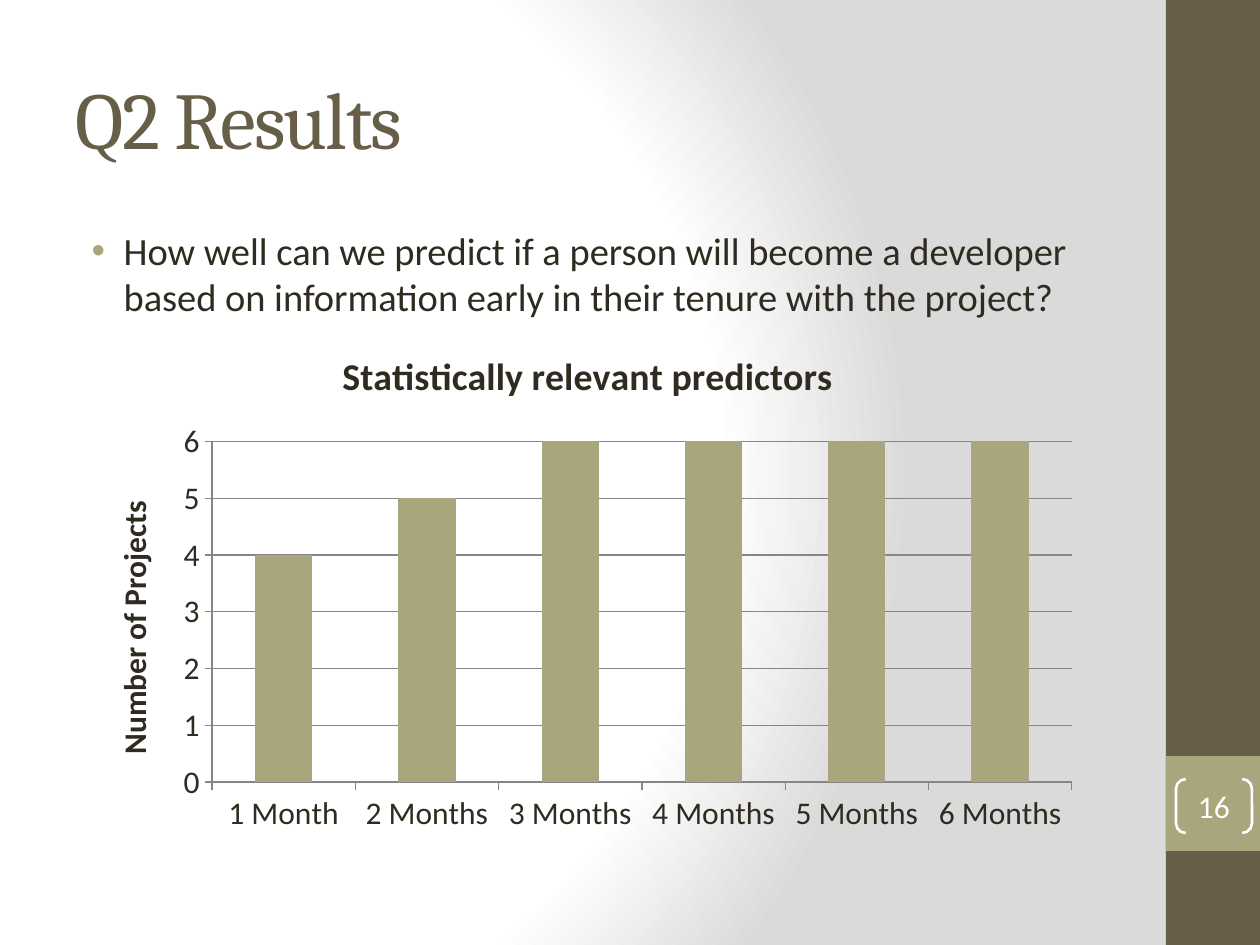
from lxml.etree import SubElement
from pptx import Presentation
from pptx.chart.data import CategoryChartData as ChartData
from pptx.dml.color import RGBColor
from pptx.enum.chart import XL_CHART_TYPE as Kind, XL_TICK_MARK as Tick
from pptx.enum.shapes import MSO_SHAPE as Shape
from pptx.enum.text import MSO_ANCHOR as Anchor, MSO_AUTO_SIZE as Fit, PP_ALIGN as Align
from pptx.oxml import parse_xml
from pptx.oxml.ns import nsdecls, qn
from pptx.util import Pt

PX = 914400 / 126
BROWN = RGBColor(0x67, 0x5E, 0x47)
OLIVE = RGBColor(0xA9, 0xA5, 0x7C)
DARK = RGBColor(0x2F, 0x2B, 0x20)
GRAY = RGBColor(0x86, 0x86, 0x86)
WHITE = RGBColor(0xFF, 0xFF, 0xFF)
SILVER = RGBColor(0xDA, 0xDA, 0xDA)


def scale(*sizes):
    return [round(size * PX) for size in sizes]


def style(font, size, color, name="Calibri", bold=False):
    font.size = Pt(size)
    font.color.rgb = color
    font.name = name
    font.bold = bold


deck = Presentation()
deck.slide_width, deck.slide_height = scale(1260, 945)
slide = deck.slides.add_slide(deck.slide_layouts[1])
shapes = slide.shapes

stops = "".join(
    f'<a:gs pos="{pos * 1000}"><a:srgbClr val="{color}"/></a:gs>'
    for pos, color in [(0, WHITE), (75, WHITE), (100, SILVER)])
slide.background.fill.solid()
props = slide.background._cSld.bg.bgPr
props.replace(props[0], parse_xml(
    f'<a:gradFill {nsdecls("a")} rotWithShape="1"><a:gsLst>{stops}</a:gsLst>'
    '<a:path path="circle"><a:fillToRect l="20000" t="50000" r="100000" b="50000"/>'
    '</a:path></a:gradFill>'))

for top, height, color in [(0, 945, BROWN), (756, 95, OLIVE)]:
    bar = shapes.add_shape(Shape.RECTANGLE, *scale(1166, top, 94, height))
    bar.shadow.inherit = False
    bar.fill.solid()
    bar.fill.fore_color.rgb = color
    bar.line.fill.background()

title = shapes.title
title.left, title.top, title.width, title.height = scale(63, 38, 1050, 158)
frame = title.text_frame
frame.text = "Q2 Results"
frame.auto_size = Fit.NONE
frame.vertical_anchor = Anchor.MIDDLE
para = frame.paragraphs[0]
para.alignment = Align.LEFT
style(para.font, 46, BROWN, "Cambria")
para.runs[0].font._element.set("spc", "-100")

body = slide.placeholders[1]
body.left, body.top, body.width, body.height = scale(63, 221, 1050, 661)
frame = body.text_frame
frame.text = ("How well can we predict if a person will become a developer "
              "based on information early in their tenure with the project?")
frame.auto_size = Fit.NONE
para = frame.paragraphs[0]
para.space_before = Pt(0)
props = para._p.get_or_add_pPr()
left, hang = scale(48, -32)
props.set("marL", str(left))
props.set("indent", str(hang))
tint = SubElement(props, qn("a:buClr"))
SubElement(tint, qn("a:srgbClr"), val=str(OLIVE))
SubElement(props, qn("a:buFont"), typeface="Arial")
SubElement(props, qn("a:buChar"), char="•")
style(para.font, 22, DARK)

page = shapes.add_shape(Shape.DOUBLE_BRACKET, *scale(1176, 779, 76, 54))
page.adjustments[0] = 0.18
page.shadow.inherit = False
page.fill.background()
page.line.color.rgb = WHITE
page.line.width = Pt(1.5)
frame = page.text_frame
frame.margin_left = frame.margin_right = frame.margin_top = frame.margin_bottom = 0
frame.vertical_anchor = Anchor.MIDDLE
frame.text = "16"
para = frame.paragraphs[0]
para.alignment = Align.CENTER
style(para.font, 18, WHITE)

data = ChartData()
data.categories = ["1 Month"] + [f"{n} Months" for n in range(2, 7)]
data.add_series("Series 1", [4, 5, 6, 6, 6, 6])
chart = shapes.add_chart(Kind.COLUMN_CLUSTERED, *scale(84, 325, 1008, 518), data).chart
style(chart.font, 18, DARK)
chart.has_legend = False
chart.has_title = True
value = chart.value_axis
value.has_title = True
value.minimum_scale, value.maximum_scale, value.major_unit = 0, 6, 1
value.has_major_gridlines = True
value.major_gridlines.format.line.color.rgb = GRAY
for holder, text, size in [(chart.chart_title, "Statistically relevant predictors", 21.6),
                           (value.axis_title, "Number of Projects", 18)]:
    holder.text_frame.text = text
    style(holder.text_frame.paragraphs[0].font, size, DARK, bold=True)
for axis in (value, chart.category_axis):
    axis.major_tick_mark = Tick.OUTSIDE
    axis.minor_tick_mark = Tick.NONE
    axis.format.line.color.rgb = GRAY
plot = chart.plots[0]
plot.gap_width = 150
plot.vary_by_categories = False
fill = plot.series[0].format.fill
fill.solid()
fill.fore_color.rgb = OLIVE

deck.save("out.pptx")
